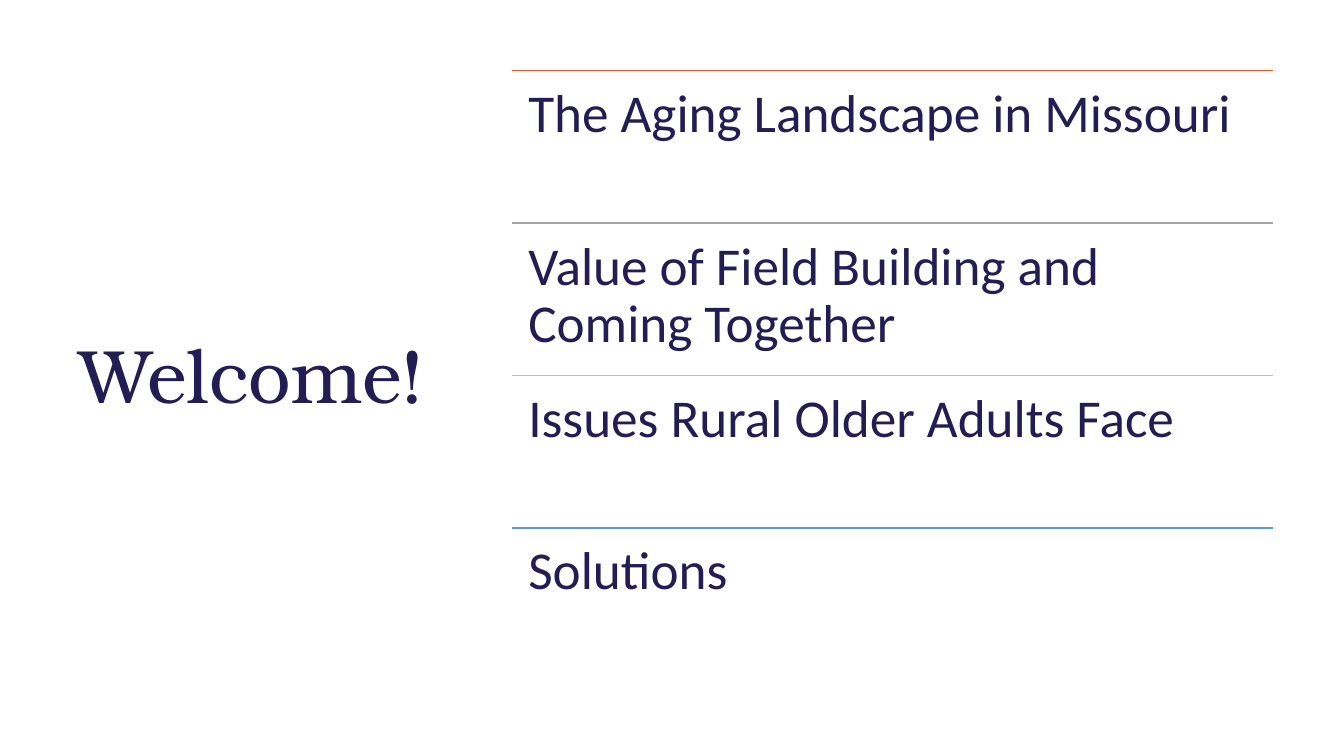
from lxml import etree
from pptx import Presentation
from pptx.dml.color import RGBColor
from pptx.enum.shapes import MSO_CONNECTOR
from pptx.enum.text import MSO_ANCHOR
from pptx.oxml.ns import qn
from pptx.util import Inches, Pt

LINE = MSO_CONNECTOR.STRAIGHT
TOP = MSO_ANCHOR.TOP
MIDDLE = MSO_ANCHOR.MIDDLE
NAVY = "231D54"
TOPICS = [
    ("The Aging Landscape in Missouri", "EF5928"),
    ("Value of Field Building and Coming Together", "A5A5A5"),
    ("Issues Rural Older Adults Face", "FFC000"),
    ("Solutions", "5B9BD5"),
]


def color(code):
    return RGBColor.from_string(code)


def add_text(slide, box, text, font, size, anchor, pad_x, pad_y):
    frame = slide.shapes.add_textbox(*map(Inches, box)).text_frame
    frame.word_wrap = True
    frame.vertical_anchor = anchor
    frame.margin_left = frame.margin_right = Inches(pad_x)
    frame.margin_top = frame.margin_bottom = Inches(pad_y)
    para = frame.paragraphs[0]
    para.line_spacing = 0.9
    run = para.add_run()
    run.text = text
    run.font.name = font
    run.font.size = Pt(size)
    run.font.color.rgb = color(NAVY)


def add_rule(slide, left, top, width, code):
    rule = slide.shapes.add_connector(
        LINE, Inches(left), Inches(top), Inches(left + width), Inches(top))
    rule.line.color.rgb = color(code)
    rule.line.width = Pt(1)
    etree.SubElement(rule._element.spPr, qn("a:effectLst"))


def add_title(slide, box):
    add_text(slide, box, "Welcome!", "TeX Gyre Bonum", 54, MIDDLE, 0.1, 0.05)


def add_topics(slide, box):
    left, top, width, height = box
    row = height / len(TOPICS)
    for i, (text, code) in enumerate(TOPICS):
        y = top + i * row
        add_rule(slide, left, y, width, code)
        add_text(slide, (left, y, width, row), text, "Calibri", 38, TOP,
                 0.16, 0.16)


def main():
    deck = Presentation()
    deck.slide_width = Inches(13.33)
    deck.slide_height = Inches(7.5)
    slide = deck.slides.add_slide(deck.slide_layouts[6])
    # Title on the left
    add_title(slide, (0.69, 0.7, 3.74, 6.11))
    # Ruled list of topics on the right
    add_topics(slide, (5.08, 0.7, 7.55, 6.05))
    deck.save("out.pptx")


if __name__ == "__main__":
    main()
